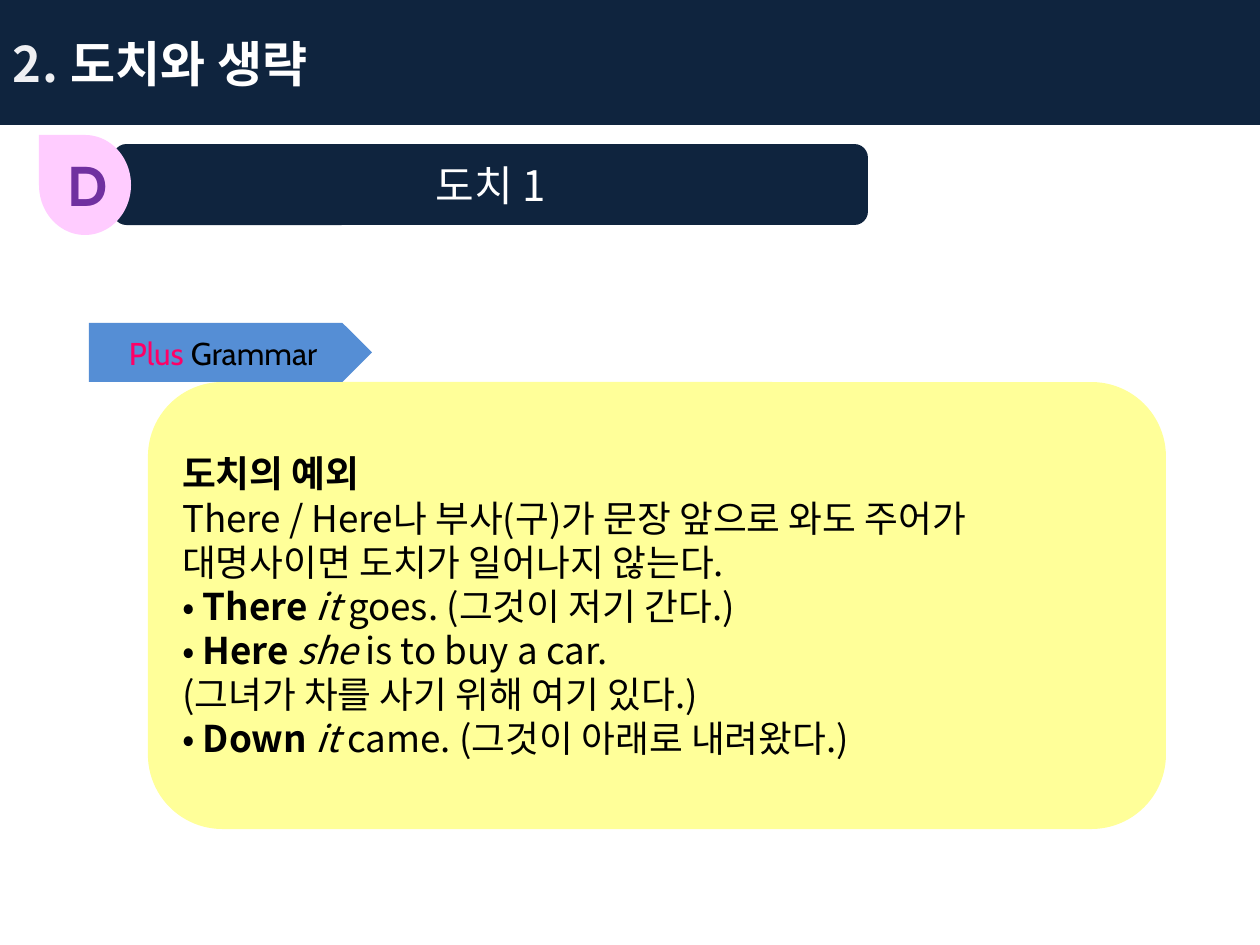
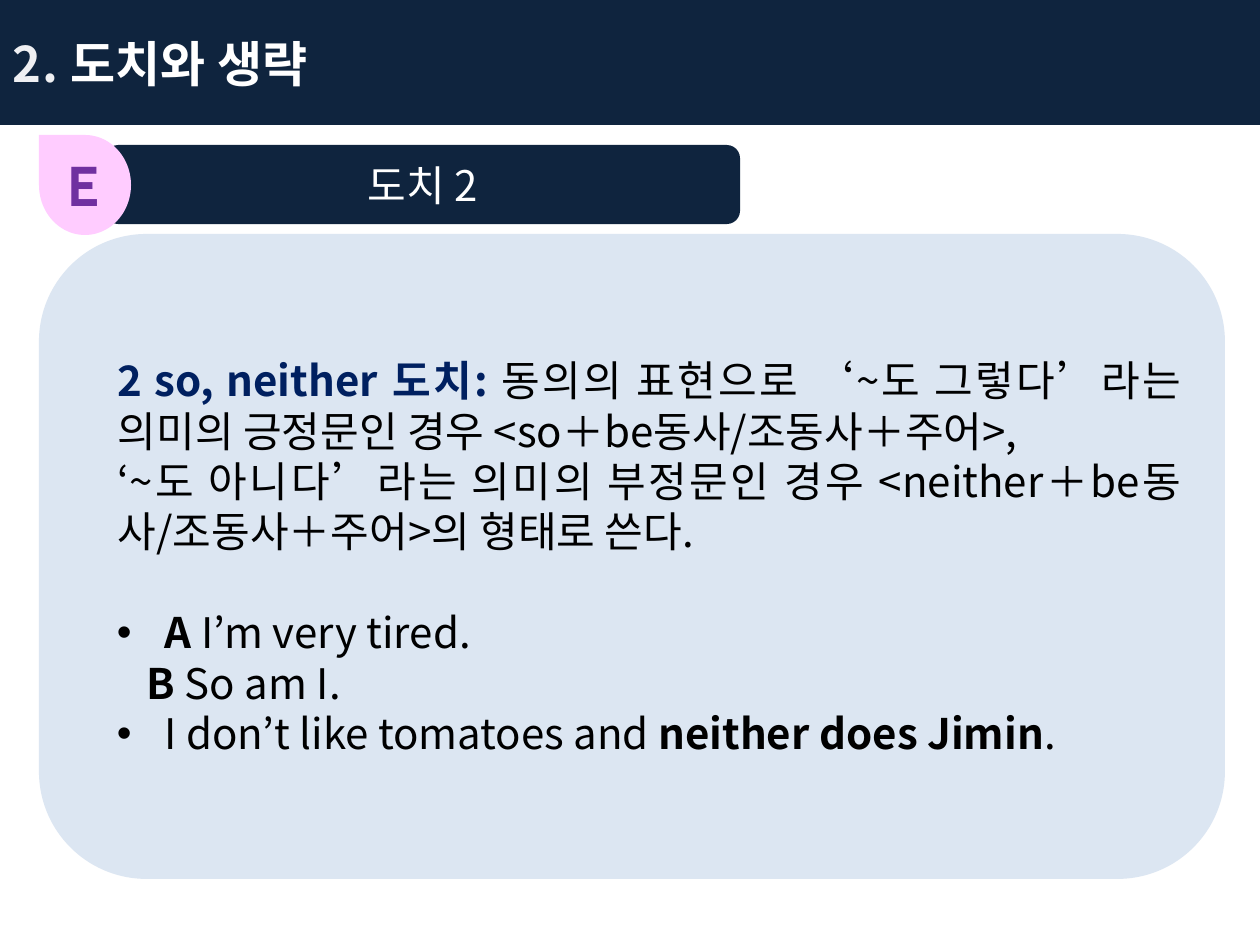
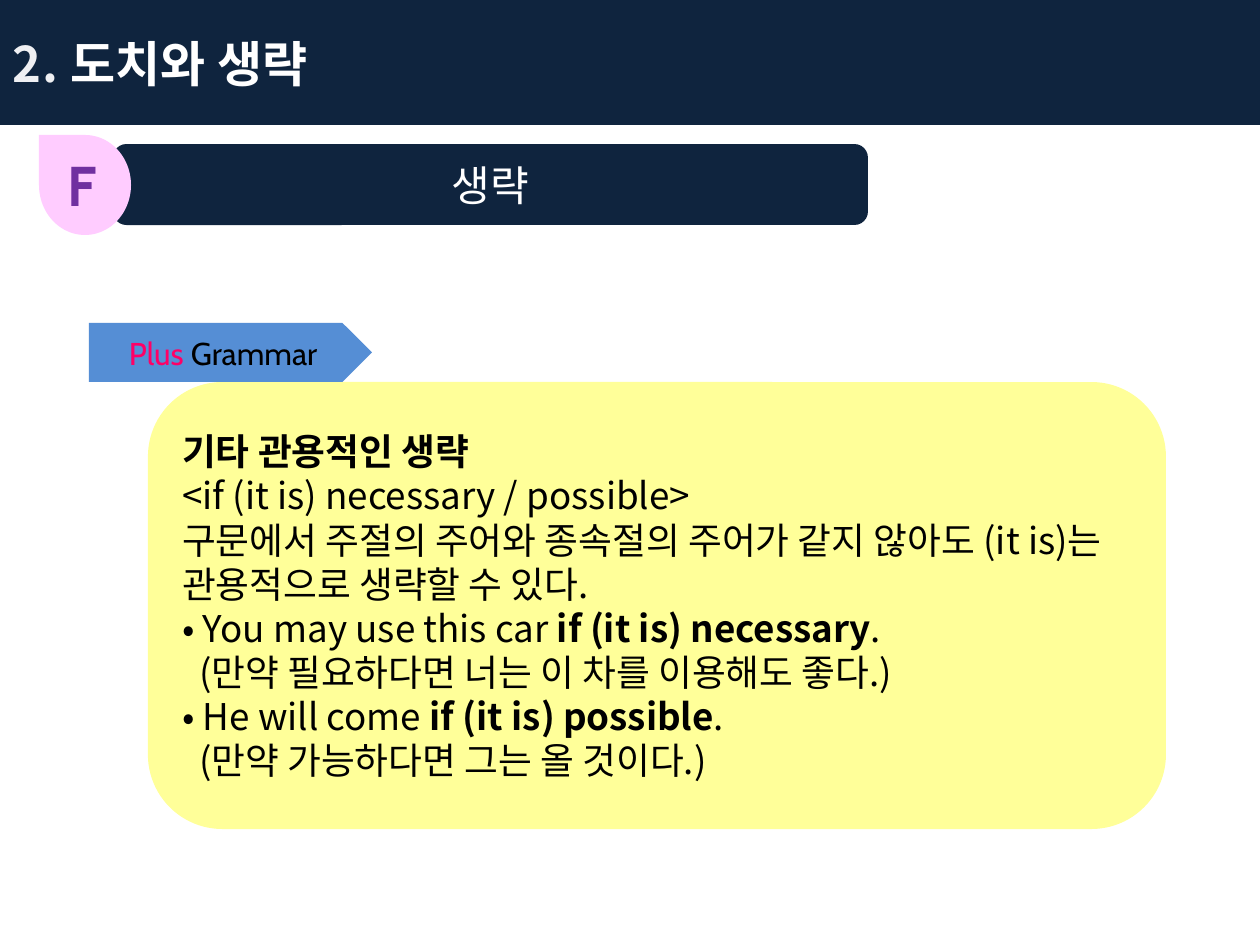
import pptx
import pptx.dml.color
import pptx.enum.shapes
import pptx.enum.text
import pptx.oxml
import pptx.oxml.ns
import pptx.util

SHAPES = pptx.enum.shapes.MSO_SHAPE
ALIGN = pptx.enum.text.PP_ALIGN
ANCHOR = pptx.enum.text.MSO_ANCHOR
AUTO_SIZE = pptx.enum.text.MSO_AUTO_SIZE

EMU_PER_PX = pptx.util.Inches(1) / 126
NAVY, WHITE, BLACK = "0F243E", "FFFFFF", "000000"
PINK, PURPLE, MAGENTA = "FFCCFF", "7030A0", "FF0066"
YELLOW, PALE_BLUE, BLUE, INK = "FFFF99", "DCE6F2", "558ED5", "002060"
KOREAN_FONT, LATIN_FONT = "Noto Sans CJK KR", "Cabin"

TITLE_BOX = (0, 0, 1260, 125)
BADGE_BOX = (39, 135, 92, 100)
WIDE_HEADING_BOX = (113, 144, 755, 81)
NARROW_HEADING_BOX = (105, 145, 635, 79)
PLUS_BOX = (89, 323, 1077, 506)
RULE_BOX = (39, 234, 1186, 645)

BOLD = {"bold": True}
ITALIC = {"italic": True}
BULLETED = {"margin": 82, "indent": -48, "bullet": "•"}


def px(length):
    return pptx.util.Emu(round(length * EMU_PER_PX))


def color(hex_value):
    return pptx.dml.color.RGBColor.from_string(hex_value)


def drawing_xml(markup):
    return pptx.oxml.parse_xml(markup.replace(
        " ", f" {pptx.oxml.ns.nsdecls('a')} ", 1))


def add_block(slide, kind, box, fill):
    shape = slide.shapes.add_shape(kind, *map(px, box))
    shape.shadow.inherit = False
    shape.fill.solid()
    shape.fill.fore_color.rgb = color(fill)
    shape.line.fill.background()
    return shape


def add_run(paragraph, text, style):
    run = paragraph.add_run()
    run.text = text
    settings = dict(style)
    run.font.color.rgb = color(settings.pop("color"))
    for name, value in settings.items():
        setattr(run.font, name, value)
    run._r.get_or_add_rPr().append(
        drawing_xml(f'<a:ea typeface="{style["name"]}"/>'))
    return run


def format_paragraph(paragraph, alignment, margin=0, indent=0, bullet=None, gap=0):
    paragraph.alignment = alignment
    paragraph.space_before = pptx.util.Pt(gap)
    properties = paragraph._p.get_or_add_pPr()
    properties.set("marL", str(px(margin)))
    properties.set("indent", str(px(indent)))
    if bullet:
        properties.append(drawing_xml('<a:buFont typeface="Arial"/>'))
        properties.append(drawing_xml(f'<a:buChar char="{bullet}"/>'))


def write(shape, paragraphs, base, alignment=ALIGN.LEFT, anchor=ANCHOR.MIDDLE):
    """Fill a shape from (layout, (text, style), ...) paragraphs."""
    frame = shape.text_frame
    frame.word_wrap = True
    frame.vertical_anchor = anchor
    for index, (layout, *runs) in enumerate(paragraphs):
        paragraph = frame.add_paragraph() if index else frame.paragraphs[0]
        format_paragraph(paragraph, alignment, **layout)
        for text, style in runs:
            add_run(paragraph, text, {**base, **style})
    return frame


def text_style(size, hex_value, name=KOREAN_FONT, **extra):
    return {"size": pptx.util.Pt(size), "color": hex_value, "name": name, **extra}


def add_title(slide, box):
    band = add_block(slide, SHAPES.RECTANGLE, box, NAVY)
    frame = write(band, [({}, ("2. ", {"color": "FCFCFD"}), ("도치와 생략", {}))],
                  text_style(28, WHITE, bold=True))
    properties = frame.paragraphs[0].runs[0]._r.get_or_add_rPr()
    properties.set("spc", "50")
    properties.insert(0, drawing_xml(
        '<a:ln w="13462"><a:solidFill><a:srgbClr val="101A26">'
        '<a:alpha val="6000"/></a:srgbClr></a:solidFill></a:ln>'))
    number_color = properties.find(pptx.oxml.ns.qn("a:solidFill"))[0]
    number_color.append(drawing_xml('<a:alpha val="95000"/>'))


def add_badge(slide, box, letter):
    left, top, width, height = box
    shift = (height - width) // 2
    drop = add_block(slide, SHAPES.TEAR,
                     (left - shift, top + shift, height, width), PINK)
    drop.rotation = 270
    label = slide.shapes.add_textbox(*map(px, (left + 16, top + 9, 59, 81)))
    frame = write(label, [({}, (letter, {}))],
                  text_style(32, PURPLE, LATIN_FONT, bold=True), anchor=ANCHOR.TOP)
    frame.auto_size = AUTO_SIZE.SHAPE_TO_FIT_TEXT


def add_header(slide, letter, heading, heading_box):
    bar = add_block(slide, SHAPES.FLOWCHART_ALTERNATE_PROCESS, heading_box, NAVY)
    write(bar, [({}, (heading, {}))], text_style(24, WHITE), ALIGN.CENTER)
    add_title(slide, TITLE_BOX)
    add_badge(slide, BADGE_BOX, letter)


def add_plus_grammar(slide, box, paragraphs):
    left, top, width, height = box
    tag_width, tag_height, panel_shift = 283, 59, 59
    panel = add_block(slide, SHAPES.FLOWCHART_ALTERNATE_PROCESS,
                      (left + panel_shift, top + tag_height,
                       width - panel_shift, height - tag_height), YELLOW)
    write(panel, paragraphs, text_style(21, BLACK))
    tag = add_block(slide, SHAPES.PENTAGON, (left, top, tag_width, tag_height), BLUE)
    write(tag, [({}, ("Plus ", {"color": MAGENTA}), ("Grammar", {}))],
          text_style(18, BLACK, LATIN_FONT), ALIGN.CENTER)


def add_rule_panel(slide, box, paragraphs):
    panel = add_block(slide, SHAPES.FLOWCHART_ALTERNATE_PROCESS, box, PALE_BLUE)
    write(panel, paragraphs, text_style(24, BLACK), ALIGN.JUSTIFY)


def plus_slide(slide, letter, heading, paragraphs):
    add_header(slide, letter, heading, WIDE_HEADING_BOX)
    add_plus_grammar(slide, PLUS_BOX, paragraphs)


def rule_slide(slide, letter, heading, paragraphs):
    add_rule_panel(slide, RULE_BOX, paragraphs)
    add_header(slide, letter, heading, NARROW_HEADING_BOX)


INVERSION_EXCEPTIONS = [
    ({}, ("도치의 예외", BOLD)),
    ({}, ("There / Here나 부사(구)가 문장 앞으로 와도 주어가 "
          "대명사이면 도치가 일어나지 않는다.", {})),
    ({}, ("• ", {}), ("There ", BOLD), ("it ", ITALIC),
     ("goes. (그것이 저기 간다.)", {})),
    ({}, ("• ", {}), ("Here ", BOLD), ("she", ITALIC), (" is to buy a car.", {})),
    ({}, ("(그녀가 차를 사기 위해 여기 있다.)", {})),
    ({}, ("• ", {}), ("Down ", BOLD), ("it", ITALIC),
     (" came. (그것이 아래로 내려왔다.)", {})),
]
SO_NEITHER = [
    ({"margin": 35}, ("2 so, neither 도치: ", {"bold": True, "color": INK}),
     ("동의의 표현으로 ‘~도 그렇다’라는 의미의 긍정문인 경우 "
      "<so＋be동사/조동사＋주어>,", {})),
    ({"margin": 35}, ("‘~도 아니다’라는 의미의 부정문인 경우 "
                      "<neither＋be동사/조동사＋주어>의 형태로 쓴다.", {})),
    ({**BULLETED, "gap": 29}, ("A ", BOLD), ("I’m very tired.", {})),
    ({"margin": 64}, ("B ", BOLD), ("So am I.", {})),
    (BULLETED, ("I don’t like tomatoes and ", {}), ("neither does Jimin", BOLD),
     (".", {})),
]
IDIOMATIC_OMISSIONS = [
    ({}, ("기타 관용적인 생략", BOLD)),
    ({}, ("<if (it is) necessary / possible>", {})),
    ({}, ("구문에서 주절의 주어와 종속절의 주어가 같지 않아도 "
          "(it is)는 관용적으로 생략할 수 있다.", {})),
    ({}, ("• You may use this car ", {}), ("if (it is) necessary", BOLD), (".", {})),
    ({"margin": 17}, ("(만약 필요하다면 너는 이 차를 이용해도 좋다.)", {})),
    ({}, ("• He will come ", {}), ("if (it is) possible", BOLD), (".", {})),
    ({"margin": 17}, ("(만약 가능하다면 그는 올 것이다.)", {})),
]
LESSONS = [
    (plus_slide, "D", "도치 1", INVERSION_EXCEPTIONS),
    (rule_slide, "E", "도치 2", SO_NEITHER),
    (plus_slide, "F", "생략", IDIOMATIC_OMISSIONS),
]


def main():
    presentation = pptx.Presentation()
    presentation.slide_width, presentation.slide_height = px(1260), px(945)
    blank = presentation.slide_layouts[6]
    for build, letter, heading, paragraphs in LESSONS:
        build(presentation.slides.add_slide(blank), letter, heading, paragraphs)
    presentation.save("out.pptx")


if __name__ == "__main__":
    main()
